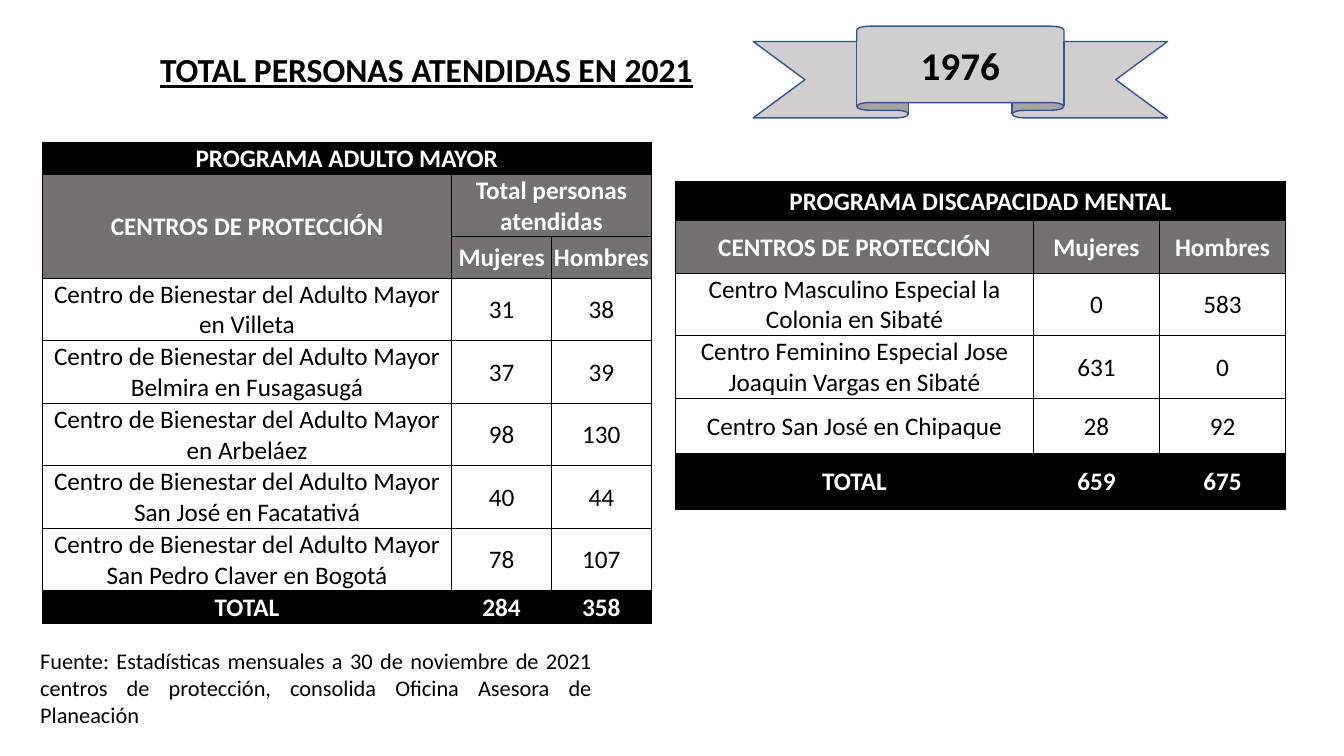
"""Build the slide of people served in 2021 by care programme."""
from lxml import etree
from pptx import Presentation
from pptx.dml.color import RGBColor
from pptx.enum.shapes import MSO_SHAPE
from pptx.enum.text import MSO_ANCHOR, MSO_AUTO_SIZE, PP_ALIGN
from pptx.oxml import parse_xml
from pptx.oxml.ns import nsdecls
from pptx.util import Inches, Pt

BLACK = RGBColor(0x00, 0x00, 0x00)
WHITE = RGBColor(0xFF, 0xFF, 0xFF)
GRAY = RGBColor(0x76, 0x71, 0x71)
RIBBON_FILL = RGBColor(0xD0, 0xCE, 0xCE)
RIBBON_LINE = RGBColor(0x32, 0x54, 0x91)


def set_font(paragraph, size, color, bold=False):
    font = paragraph.font
    font.name, font.size, font.bold = "Calibri", Pt(size), bold
    font.color.rgb = color


def format_cell(cell, fill):
    cell.vertical_anchor = MSO_ANCHOR.MIDDLE
    cell.margin_left = cell.margin_right = cell.margin_top = Inches(0.01)
    cell.margin_bottom = 0
    properties = cell._tc.get_or_add_tcPr()
    for side in ("lnL", "lnR", "lnT", "lnB"):
        properties.append(parse_xml(
            f'<a:{side} {nsdecls("a")} w="12700"><a:solidFill>'
            f'<a:srgbClr val="{BLACK}"/></a:solidFill></a:{side}>'))
    if fill is None:
        cell.fill.background()
    else:
        cell.fill.solid()
        cell.fill.fore_color.rgb = fill
    paragraph = cell.text_frame.paragraphs[0]
    paragraph.alignment = PP_ALIGN.CENTER
    set_font(paragraph, 18, BLACK if fill is None else WHITE, fill is not None)


presentation = Presentation()
presentation.slide_width = Inches(13.33)
presentation.slide_height = Inches(7.5)
slide = presentation.slides.add_slide(presentation.slide_layouts[5])

title = slide.shapes.title
title.left, title.top = Inches(0.99), Inches(0.47)
title.width, title.height = Inches(6.48), Inches(0.49)
title.text_frame.text = "TOTAL PERSONAS ATENDIDAS EN 2021"
title.text_frame.vertical_anchor = MSO_ANCHOR.MIDDLE
title.text_frame.auto_size = MSO_AUTO_SIZE.NONE
paragraph = title.text_frame.paragraphs[0]
paragraph.alignment = PP_ALIGN.CENTER
paragraph.line_spacing = 0.9
set_font(paragraph, 24, BLACK, True)
paragraph.font.underline = True

programs = [
    {
        "left": 0.42, "top": 1.41, "header_rows": 2,
        "columns": [4.06, 0.99, 0.99],
        "heights": [0.32, 0.62, 0.41] + [0.62] * 5 + [0.32],
        "merges": [((0, 0), (0, 2)), ((1, 0), (2, 0)), ((1, 1), (1, 2))],
        "rows": [
            ("PROGRAMA ADULTO MAYOR", "", ""),
            ("CENTROS DE PROTECCIÓN", "Total personas atendidas", ""),
            ("", "Mujeres", "Hombres"),
            ("Centro de Bienestar del Adulto Mayor en Villeta", 31, 38),
            ("Centro de Bienestar del Adulto Mayor Belmira en Fusagasugá", 37, 39),
            ("Centro de Bienestar del Adulto Mayor en Arbeláez", 98, 130),
            ("Centro de Bienestar del Adulto Mayor San José en Facatativá", 40, 44),
            ("Centro de Bienestar del Adulto Mayor San Pedro Claver en Bogotá", 78, 107),
            ("TOTAL", 284, 358),
        ],
    },
    {
        "left": 6.7, "top": 1.8, "header_rows": 1,
        "columns": [3.55, 1.25, 1.25],
        "heights": [0.39, 0.52, 0.62, 0.62, 0.55, 0.55],
        "merges": [((0, 0), (0, 2))],
        "rows": [
            ("PROGRAMA DISCAPACIDAD MENTAL", "", ""),
            ("CENTROS DE PROTECCIÓN", "Mujeres", "Hombres"),
            ("Centro Masculino Especial la Colonia en Sibaté", 0, 583),
            ("Centro Feminino Especial Jose Joaquin Vargas en Sibaté", 631, 0),
            ("Centro San José en Chipaque", 28, 92),
            ("TOTAL", 659, 675),
        ],
    },
]

for program in programs:
    rows, columns, heights = program["rows"], program["columns"], program["heights"]
    table = slide.shapes.add_table(
        len(rows), len(columns), Inches(program["left"]), Inches(program["top"]),
        Inches(sum(columns)), Inches(sum(heights))).table
    table.first_row = table.horz_banding = False
    for column, width in zip(table.columns, columns):
        column.width = Inches(width)
    for index, (values, height) in enumerate(zip(rows, heights)):
        table.rows[index].height = Inches(height)
        if index in (0, len(rows) - 1):
            fill = BLACK
        else:
            fill = GRAY if index <= program["header_rows"] else None
        for position, value in enumerate(values):
            cell = table.cell(index, position)
            cell.text = str(value)
            format_cell(cell, fill)
    for first, last in program["merges"]:
        table.cell(*first).merge(table.cell(*last))

source = slide.shapes.add_textbox(Inches(0.3), Inches(6.37), Inches(5.67), Inches(0.91))
source.text_frame.word_wrap = True
source.text_frame.auto_size = MSO_AUTO_SIZE.SHAPE_TO_FIT_TEXT
source.text_frame.text = (
    "Fuente: Estadísticas mensuales a 30 de noviembre de 2021 centros de "
    "protección, consolida Oficina Asesora de Planeación")
paragraph = source.text_frame.paragraphs[0]
paragraph.alignment = PP_ALIGN.JUSTIFY
set_font(paragraph, 16, BLACK)

ribbon = slide.shapes.add_shape(
    MSO_SHAPE.UP_RIBBON, Inches(7.47), Inches(0.26), Inches(4.11), Inches(0.91))
ribbon.shadow.inherit = False
ribbon.fill.solid()
ribbon.fill.fore_color.rgb = RIBBON_FILL
ribbon.line.color.rgb = RIBBON_LINE
ribbon.line.width = Pt(1)
ribbon.text_frame.text = "1976"
ribbon.text_frame.vertical_anchor = MSO_ANCHOR.MIDDLE
paragraph = ribbon.text_frame.paragraphs[0]
paragraph.alignment = PP_ALIGN.CENTER
set_font(paragraph, 28, BLACK, True)

presentation.save("out.pptx")
